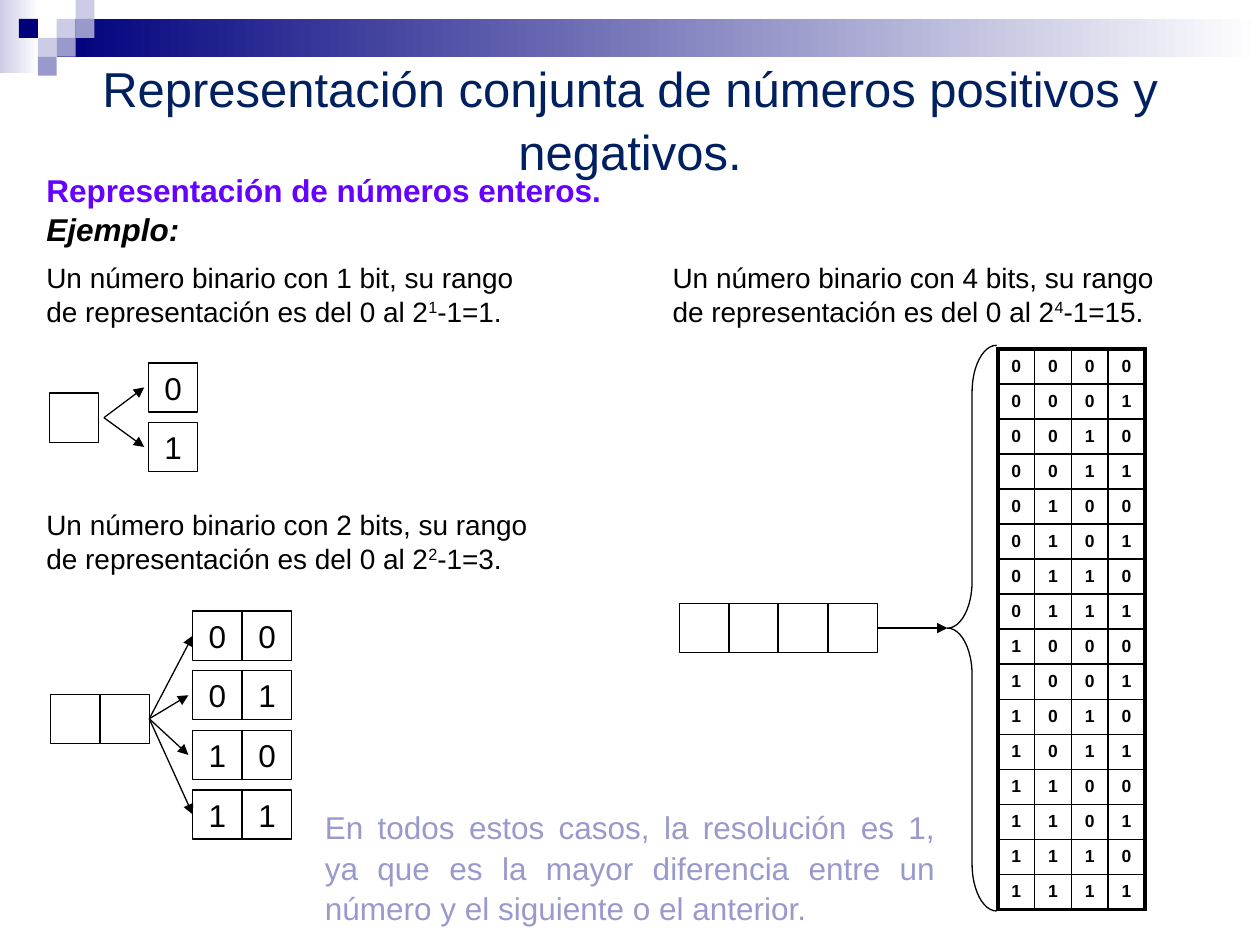
from collections import namedtuple
from itertools import product
from lxml.etree import SubElement
from pptx import Presentation
from pptx.dml.color import RGBColor
from pptx.enum.shapes import MSO_CONNECTOR, MSO_SHAPE
from pptx.enum.text import MSO_ANCHOR, PP_ALIGN
from pptx.oxml.ns import qn
from pptx.util import Inches, Pt

Theme = namedtuple("Theme", "font ink navy violet pale mid deep white title head body tiny thin rule frame")
theme = Theme("Arial", "000000", "002060", "6600FF", "CCCCE6", "9999CC", "00007D", "FFFFFF",
              28, 18, 16, 10, 0.75, 1, 2.25)

UNIT = 0.1          # the slide is a grid of 100 columns by 75 rows
CELL = 3.9          # side of a bit box
STEP = 3.95         # from one bit to the next
DROP = 4.73         # from one number to the next


class Box(namedtuple("Box", "x y w h")):
    """A rectangle in grid units."""

    def sub(self, x, y, w, h):
        return Box(self.x + x, self.y + y, w, h)

    def emu(self):
        return [grid(n) for n in self]


def grid(n):
    return Inches(round(n * UNIT, 3))


def color(name):
    return RGBColor.from_string(name)


def write(para, text, size, ink=theme.ink, bold=False, slant=False, raised=False):
    run = para.add_run()
    run.text = text
    font = run.font
    font.name, font.size, font.bold, font.italic = theme.font, Pt(size), bold, slant
    font.color.rgb = color(ink)
    if raised:
        run._r.get_or_add_rPr().set("baseline", "30000")


def label(slide, box):
    frame = slide.shapes.add_textbox(*box.emu()).text_frame
    frame.word_wrap = True
    return frame


def draw(shapes, kind, box):
    """Add a plain outlined shape."""
    shape = shapes.add_shape(kind, *box.emu())
    shape.shadow.inherit = False
    shape.fill.background()
    shape.line.color.rgb = color(theme.ink)
    shape.line.width = Pt(theme.thin)
    return shape


def arrow(shapes, start, end):
    line = shapes.add_connector(MSO_CONNECTOR.STRAIGHT, *map(grid, start + end))
    line.line.color.rgb = color(theme.ink)
    line.line.width = Pt(theme.thin)
    SubElement(line.line._get_or_add_ln(), qn("a:tailEnd"), type="triangle")
    SubElement(line._element.spPr, qn("a:effectLst"))
    return line


def bits(shapes, box, digits):
    """Draw a row of bit boxes, blank where the digit is a space."""
    row = []
    for i, digit in enumerate(digits):
        shape = draw(shapes, MSO_SHAPE.RECTANGLE, box.sub(i * STEP, 0, CELL, CELL))
        if digit.strip():
            frame = shape.text_frame
            frame.word_wrap = False
            frame.vertical_anchor = MSO_ANCHOR.MIDDLE
            frame.margin_left = frame.margin_right = frame.margin_top = frame.margin_bottom = 0
            frame.paragraphs[0].alignment = PP_ALIGN.CENTER
            write(frame.paragraphs[0], digit, theme.head)
        row.append(shape)
    return row


def banner(slide, box):
    """Fading bars and the small mosaic at the top left."""
    shapes = slide.shapes.add_group_shape().shapes

    def tile(part, *tones):
        shape = draw(shapes, MSO_SHAPE.RECTANGLE, part)
        shape.line.fill.background()
        if len(tones) == 1:
            shape.fill.solid()
            shape.fill.fore_color.rgb = color(tones[0])
            return
        shape.fill.gradient()
        shape.fill.gradient_angle = 0
        for stop, tone, place in zip(shape.fill.gradient_stops, tones, (0, 1)):
            stop.color.rgb, stop.position = color(tone), place

    tile(box.sub(0, 0, 3.1, 5.8), theme.pale, theme.white)
    tile(box.sub(4.5, 1.5, box.w - 4.5, 3), theme.deep, theme.white)
    mosaic = [(3, 1, theme.pale), (4, 0, theme.pale), (4, 1, theme.mid), (2, 2, theme.pale),
              (1, 1, theme.deep), (3, 2, theme.mid), (2, 3, theme.mid)]
    for col, row, tone in mosaic:
        tile(box.sub(col * 1.5, row * 1.5, 1.5, 1.5), tone)


def heading(slide, box):
    title = slide.shapes.title
    title.left, title.top, title.width, title.height = box.emu()
    frame = title.text_frame
    frame.word_wrap = True
    frame.vertical_anchor = MSO_ANCHOR.TOP
    para = frame.paragraphs[0]
    para.alignment, para.line_spacing = PP_ALIGN.CENTER, 1.06
    write(para, "Representación conjunta de números positivos y negativos.", theme.title)
    para.runs[0].font.color.rgb = color(theme.navy)


def intro(slide, box):
    para = label(slide, box.sub(0, 0, box.w, 4.7)).paragraphs[0]
    write(para, "Representación de números enteros.", theme.head, theme.violet, bold=True)
    para = label(slide, box.sub(0, 3.1, box.w, 3.9)).paragraphs[0]
    write(para, "Ejemplo:", theme.head, bold=True, slant=True)


def caption(slide, box, count):
    """State the range of a number with the given count of bits."""
    frame = label(slide, box)
    noun = "bit" if count == 1 else "bits"
    write(frame.paragraphs[0], f"Un número binario con {count} {noun}, su rango", theme.body)
    para = frame.add_paragraph()
    write(para, "de representación es del 0 al 2", theme.body)
    write(para, str(count), theme.body, raised=True)
    write(para, f"-1={2 ** count - 1}.", theme.body)


def fan(slide, box, count, source, left, joined):
    """Draw blank bits at the source offset, with arrows to every number they can hold."""
    shapes = slide.shapes.add_group_shape().shapes
    last = bits(shapes, box.sub(0, source, 0, 0), " " * count)[-1]
    middle = box.y + source + CELL / 2
    total = 2 ** count
    for i, digits in enumerate(product("01", repeat=count)):
        first = bits(shapes, box.sub(left, i * DROP, 0, 0), digits)[0]
        start = (box.x + count * STEP + 0.4, middle)
        end = (box.x + left - 0.35, box.y + i * DROP + CELL / 2)
        line = arrow(shapes, start, end)
        if joined:
            line.begin_connect(last, 3)
            if i in (0, total - 1):
                line.end_connect(first, 1)


def brace(slide, box):
    """Draw four blank bits with an arrow to a brace as tall as the box."""
    shapes = slide.shapes.add_group_shape().shapes
    middle = box.h / 2
    last = bits(shapes, box.sub(0, middle - CELL / 2, 0, 0), " " * 4)[-1]
    curl = draw(shapes, MSO_SHAPE.LEFT_BRACE, box.sub(box.w - CELL, 0, CELL, box.h))
    curl.adjustments[0], curl.adjustments[1] = 0.954, 0.5
    line = arrow(shapes, (box.x + 4 * STEP, box.y + middle), (box.x + box.w - CELL, box.y + middle))
    line.begin_connect(last, 3)
    line.end_connect(curl, 1)


def border(cell, side, width):
    edge = SubElement(cell._tc.get_or_add_tcPr(), qn(f"a:ln{side}"), w=str(Pt(width)))
    SubElement(SubElement(edge, qn("a:solidFill")), qn("a:srgbClr"), val=theme.ink)


def listing(slide, box, count):
    """Tabulate every number of the given count of bits."""
    total = 2 ** count
    table = slide.shapes.add_table(total, count, *box.emu()).table
    table.first_row = table.horz_banding = False
    for col in table.columns:
        col.width = grid(box.w / count)
    for r, digits in enumerate(product("01", repeat=count)):
        table.rows[r].height = grid(box.h / total)
        for c, digit in enumerate(digits):
            cell = table.cell(r, c)
            outer = {"L": c == 0, "R": c == count - 1, "T": r == 0, "B": r == total - 1}
            for side, edge in outer.items():
                border(cell, side, theme.frame if edge else theme.rule)
            cell.fill.background()
            cell.margin_left = cell.margin_right = 0
            cell.margin_top = cell.margin_bottom = grid(0.2)
            cell.vertical_anchor = MSO_ANCHOR.MIDDLE
            para = cell.text_frame.paragraphs[0]
            para.alignment = PP_ALIGN.CENTER
            write(para, digit, theme.tiny, bold=True)


def closing(slide, box):
    para = label(slide, box).paragraphs[0]
    para.alignment, para.line_spacing = PP_ALIGN.JUSTIFY, 1.06
    write(para, "En todos estos casos, la resolución es 1, ya que es la mayor diferencia "
                "entre un número y el siguiente o el anterior.", theme.head, theme.mid)


def main():
    deck = Presentation()
    deck.slide_width, deck.slide_height = grid(100), grid(75)
    slide = deck.slides.add_slide(deck.slide_layouts[5])
    banner(slide, Box(0, 0, 100, 6))
    heading(slide, Box(5, 3.9, 90, 9.4))
    intro(slide, Box(2.7, 13.1, 94.5, 7))
    caption(slide, Box(2.7, 20.2, 45.7, 6.6), 1)
    fan(slide, Box(3.9, 28.8, 11.8, 8.7), 1, 2.4, 7.9, False)
    caption(slide, Box(2.7, 39.8, 45.7, 6.6), 2)
    fan(slide, Box(4, 48.5, 19.2, 18.1), 2, 6.6, 11.3, True)
    caption(slide, Box(52.4, 20.2, 45.7, 6.6), 4)
    brace(slide, Box(53.9, 27.4, 25.2, 44.9))
    listing(slide, Box(79.2, 27.7, 11.7, 44.4), 4)
    closing(slide, Box(24.8, 63.5, 50.4, 9.4))
    deck.save("out.pptx")


if __name__ == "__main__":
    main()
